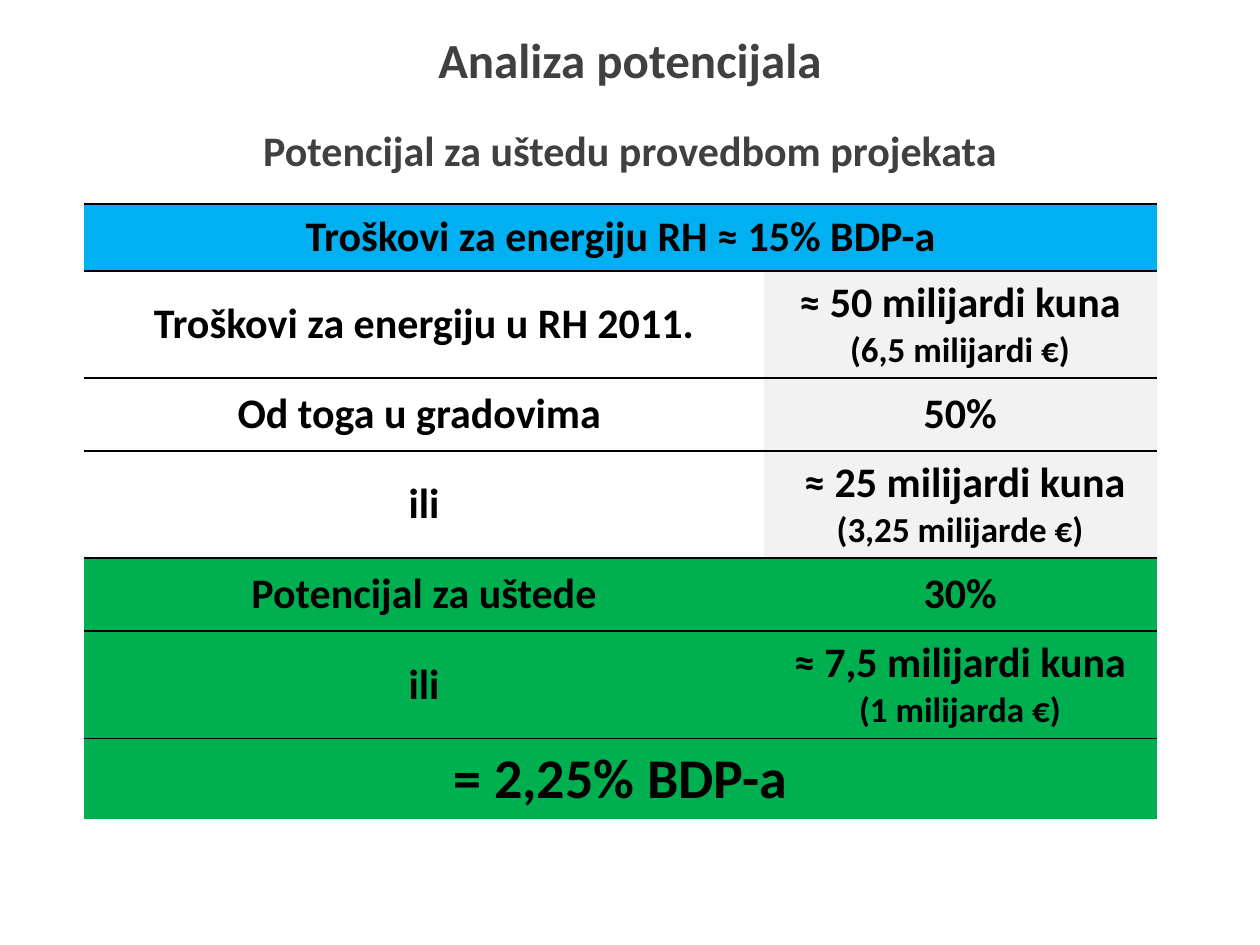
import pptx
import pptx.util
import pptx.dml.color
import pptx.enum.text
import pptx.oxml
import pptx.oxml.ns

HUES = {"ink": "000000", "head": "404040", "blue": "00B0F0",
        "white": "FFFFFF", "grey": "F2F2F2", "green": "00B050"}
WIDE, HIGH = 10, 7.5
COLS = [5.39, 3.12]
PLAIN = "{2D5ABB26-0587-4C30-8999-92F81FD0307C}"
ROWS = [
    (0.53, ["blue"], [["Troškovi za energiju RH ≈ 15% BDP-a"]]),
    (0.85, ["white", "grey"], [["Troškovi za energiju u RH 2011."],
                               ["≈ 50 milijardi kuna", "(6,5 milijardi €)"]]),
    (0.58, ["white", "grey"], [["Od toga u gradovima "], ["50%"]]),
    (0.85, ["white", "grey"], [["ili"],
                               [" ≈ 25 milijardi kuna", "(3,25 milijarde €)"]]),
    (0.58, ["green", "green"], [["Potencijal za uštede"], ["30%"]]),
    (0.85, ["green", "green"], [["ili"],
                                ["≈ 7,5 milijardi kuna", "(1 milijarda €)"]]),
    (0.64, ["green"], [["= 2,25% BDP-a"]]),
]


def inch(size):
    return pptx.util.Inches(size)


def tint(name):
    return pptx.dml.color.RGBColor.from_string(HUES[name])


def write(frame, lines, sizes, hue="ink", bare=False):
    for i, (line, size) in enumerate(zip(lines, sizes)):
        para = frame.paragraphs[0] if i == 0 else frame.add_paragraph()
        para.alignment = pptx.enum.text.PP_ALIGN.CENTER
        if bare:
            para.space_before = pptx.util.Pt(0)
            props = para._p.get_or_add_pPr()
            props.set("marL", "0")
            props.set("indent", "0")
            props.append(pptx.oxml.parse_xml(
                f"<a:buNone {pptx.oxml.ns.nsdecls('a')}/>"))
        run = para.add_run()
        run.text = line
        run.font.name = "Calibri"
        run.font.size = pptx.util.Pt(size)
        run.font.bold = True
        run.font.color.rgb = tint(hue)


def head(shape, box, text, size):
    shape.left, shape.top, shape.width, shape.height = map(inch, box)
    frame = shape.text_frame
    frame.word_wrap = True
    frame.auto_size = pptx.enum.text.MSO_AUTO_SIZE.NONE
    frame.vertical_anchor = pptx.enum.text.MSO_ANCHOR.MIDDLE
    write(frame, [text], [size], hue="head", bare=True)


def rule(cell, side):
    cell._tc.get_or_add_tcPr().append(pptx.oxml.parse_xml(
        f'<a:{side} {pptx.oxml.ns.nsdecls("a")} w="12700"><a:solidFill>'
        f'<a:srgbClr val="{HUES["ink"]}"/></a:solidFill></a:{side}>'))


def grid(slide, box):
    shape = slide.shapes.add_table(len(ROWS), len(COLS), *map(inch, box))
    table = shape.table
    table.first_row = table.horz_banding = False
    table._tbl.tblPr.find(pptx.oxml.ns.qn("a:tableStyleId")).text = PLAIN
    for col, width in zip(table.columns, COLS):
        col.width = inch(width)
    last = len(ROWS) - 1
    for r, (high, fills, texts) in enumerate(ROWS):
        table.rows[r].height = inch(high)
        for c in range(len(COLS)):
            rule(table.cell(r, c), "lnT")
            if r < last:
                rule(table.cell(r, c), "lnB")
        if len(texts) == 1:
            table.cell(r, 0).merge(table.cell(r, len(COLS) - 1))
        for c, (fill, lines) in enumerate(zip(fills, texts)):
            cell = table.cell(r, c)
            cell.fill.solid()
            cell.fill.fore_color.rgb = tint(fill)
            cell.vertical_anchor = pptx.enum.text.MSO_ANCHOR.MIDDLE
            write(cell.text_frame, lines, [32 if r == last else 24, 20])


def main():
    deck = pptx.Presentation()
    deck.slide_width, deck.slide_height = inch(WIDE), inch(HIGH)
    slide = deck.slides.add_slide(deck.slide_layouts[1])
    title, body = slide.placeholders
    grid(slide, (0.67, 1.62, sum(COLS), sum(row[0] for row in ROWS)))
    head(body, (0, 0.84, WIDE, 0.7),
         "Potencijal za uštedu provedbom projekata", 24)
    head(title, (0, 0, WIDE, 0.94), "Analiza potencijala", 28)
    deck.save("out.pptx")


if __name__ == "__main__":
    main()
